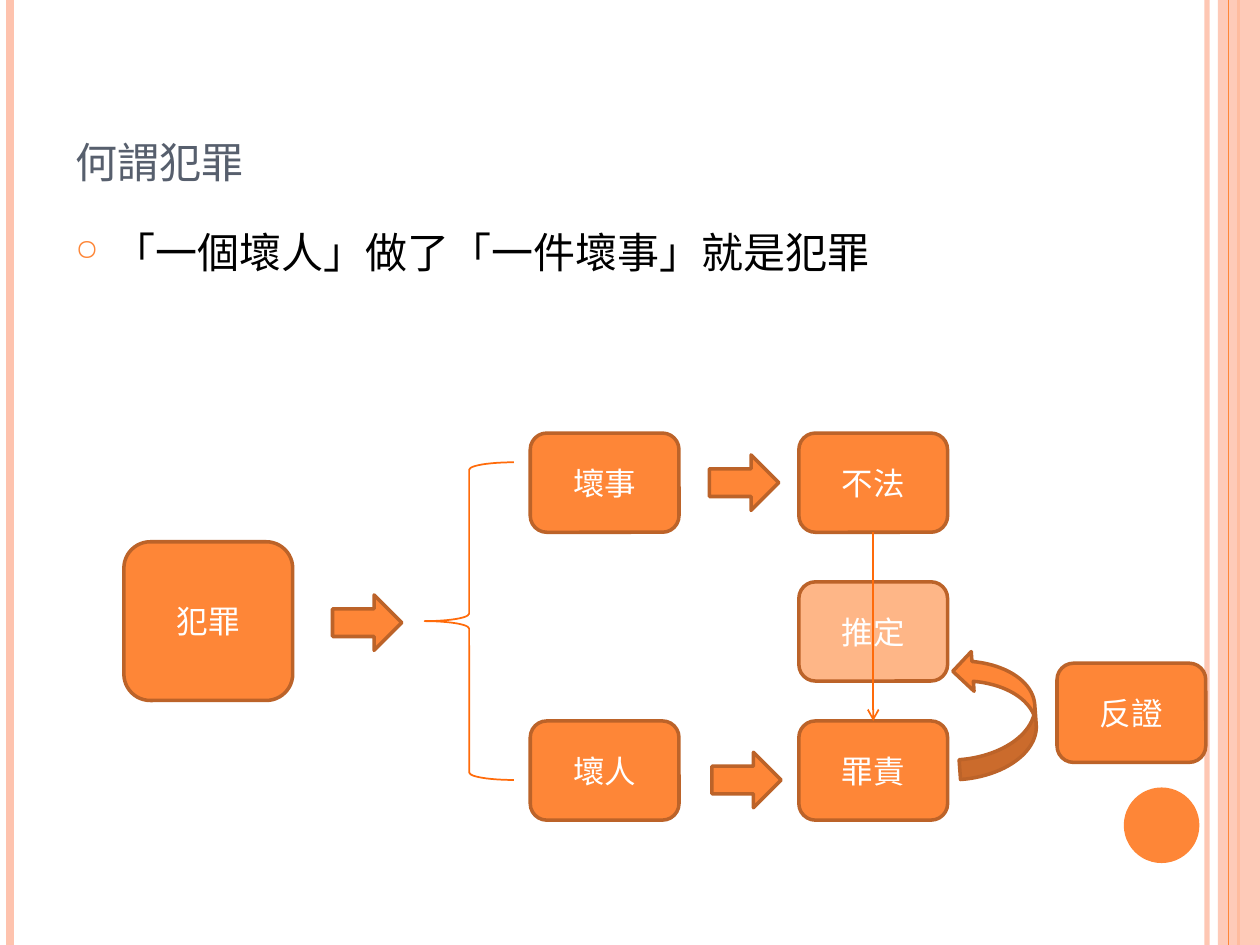
"""Build the slide that explains what a crime is."""
from dataclasses import dataclass

from lxml.etree import SubElement
from pptx import Presentation
from pptx.dml.color import RGBColor
from pptx.enum.shapes import MSO_CONNECTOR, MSO_SHAPE
from pptx.enum.text import MSO_ANCHOR, PP_ALIGN
from pptx.oxml.ns import qn
from pptx.util import Pt


@dataclass(frozen=True)
class Theme:
    """Colours, type sizes and font of the slide."""
    accent: str = "FE8637"
    accent_pale: str = "FEB687"
    accent_dark: str = "BC6329"
    stroke: str = "FF6B0A"
    band: str = "FEC3AE"
    title: str = "575F6D"
    body: str = "000000"
    label: str = "FFFFFF"
    font: str = "Cambria"
    title_size: int = 30
    body_size: int = 24
    label_size: int = 18


THEME = Theme()
SLIDE_WIDTH, SLIDE_HEIGHT = 720, 540
BOX_WIDTH, BOX_HEIGHT = 85, 56.7
ARROW_WIDTH, ARROW_HEIGHT = 39.6, 31.7


def set_alpha(element, percent):
    """Give the solid colour inside an element an opacity."""
    color = next(element.iter(qn("a:srgbClr")))
    SubElement(color, qn("a:alpha"), val=str(percent * 1000))


def write_text(frame, text, *, size, color, align=PP_ALIGN.LEFT,
               anchor=MSO_ANCHOR.TOP, small_caps=False):
    """Write one formatted paragraph and return it."""
    frame.word_wrap = True
    frame.vertical_anchor = anchor
    para = frame.paragraphs[0]
    para.alignment = align
    span = para.add_run()
    span.text = text
    span.font.name = THEME.font
    span.font.size = Pt(size)
    span.font.color.rgb = RGBColor.from_string(color)
    if small_caps:
        span.font._element.set("cap", "small")
    return para


def add_text_box(page, text, left, top, width, height, **style):
    """Add a text box and return its paragraph."""
    box = page.shapes.add_textbox(Pt(left), Pt(top), Pt(width), Pt(height))
    return write_text(box.text_frame, text, **style)


def add_bullet(para, char, color, percent, indent):
    """Give a paragraph a hanging bullet."""
    properties = para._p.get_or_add_pPr()
    properties.set("marL", str(Pt(indent)))
    properties.set("indent", str(-Pt(indent)))
    bullet_color = SubElement(properties, qn("a:buClr"))
    SubElement(bullet_color, qn("a:srgbClr"), val=color)
    SubElement(properties, qn("a:buSzPct"), val=str(percent * 1000))
    SubElement(properties, qn("a:buChar"), char=char)


def add_figure(page, kind, left, top, width, height, *, fill=THEME.accent,
               line=THEME.accent_dark, weight=2):
    """Add a preset shape; None leaves out its fill or line."""
    figure = page.shapes.add_shape(kind, Pt(left), Pt(top), Pt(width), Pt(height))
    figure.shadow.inherit = False
    if fill:
        figure.fill.solid()
        figure.fill.fore_color.rgb = RGBColor.from_string(fill)
    else:
        figure.fill.background()
    if line:
        figure.line.color.rgb = RGBColor.from_string(line)
        figure.line.width = Pt(weight)
    else:
        figure.line.fill.background()
    return figure


def add_box(page, text, left, top, width=BOX_WIDTH, height=BOX_HEIGHT,
            fill=THEME.accent):
    """Add a rounded box with a centred label."""
    box = add_figure(page, MSO_SHAPE.ROUNDED_RECTANGLE, left, top, width, height,
                     fill=fill)
    write_text(box.text_frame, text, size=THEME.label_size, color=THEME.label,
               align=PP_ALIGN.CENTER, anchor=MSO_ANCHOR.MIDDLE)
    return box


def add_line(page, start, end, color, weight):
    """Add a straight line without a shadow."""
    line = page.shapes.add_connector(MSO_CONNECTOR.STRAIGHT, *map(Pt, start + end))
    line.line.color.rgb = RGBColor.from_string(color)
    line.line.width = Pt(weight)
    SubElement(line._element.spPr, qn("a:effectLst"))
    return line


def join_down(page, upper, lower):
    """Join two boxes by an arrow from bottom to top."""
    line = add_line(page, (0, 0), (0, 0), THEME.stroke, 1)
    line.begin_connect(upper, 2)
    line.end_connect(lower, 0)
    SubElement(line.line._get_or_add_ln(), qn("a:tailEnd"), type="arrow")


def add_rule(page, x, color, weight):
    """Add a line over the full slide height."""
    return add_line(page, (x, 0), (x, SLIDE_HEIGHT), color, weight)


def add_decoration(page):
    """Draw the side bands and the corner disc."""
    set_alpha(add_rule(page, 689.8, THEME.band, 3)._element, 93)
    add_rule(page, 5.8, THEME.band, 4.5)
    add_rule(page, 707.8, THEME.accent, 1.5)
    band = add_figure(page, MSO_SHAPE.RECTANGLE, 696, 0, 24, SLIDE_HEIGHT,
                      fill=THEME.band, line=None)
    set_alpha(band._element, 87)
    add_rule(page, 702, THEME.accent, 0.75)
    add_figure(page, MSO_SHAPE.OVAL, 642.2, 450, 43.2, 43.2, line=None)


def add_diagram(page):
    """Draw the boxes, arrows and brace."""
    act_column, law_column = 303, 456.5
    upper_row, middle_row, lower_row = 247.5, 332.5, 412
    add_box(page, "犯罪", 70.8, 309.6, 96.5, 90.7)
    add_figure(page, MSO_SHAPE.LEFT_BRACE, 242.6, 264.2, 51, 181.5,
               fill=None, line=THEME.stroke, weight=1)
    for left, top in ((190, 340), (405.4, 260), (406.8, 429.9)):
        add_figure(page, MSO_SHAPE.RIGHT_ARROW, left, top, ARROW_WIDTH, ARROW_HEIGHT)
    add_box(page, "壞事", act_column, upper_row)
    add_box(page, "壞人", act_column, lower_row)
    guilt = add_box(page, "罪責", law_column, lower_row)
    unlawful = add_box(page, "不法", law_column, upper_row)
    add_box(page, "推定", law_column, middle_row, fill=THEME.accent_pale)
    join_down(page, unlawful, guilt)
    rebuttal = add_figure(page, MSO_SHAPE.CURVED_UP_ARROW, 532.2, 384.5, 73.4, 45.4)
    rebuttal.rotation = 265.9
    add_box(page, "反證", 604, 379)


def main():
    """Build and save the deck."""
    deck = Presentation()
    deck.slide_width, deck.slide_height = Pt(SLIDE_WIDTH), Pt(SLIDE_HEIGHT)
    page = deck.slides.add_slide(deck.slide_layouts[6])
    add_decoration(page)
    add_text_box(page, "何謂犯罪", 36, 21.6, 588, 90, size=THEME.title_size,
                 color=THEME.title, anchor=MSO_ANCHOR.BOTTOM, small_caps=True)
    para = add_text_box(page, "「一個壞人」做了「一件壞事」就是犯罪", 36, 126, 588, 384,
                        size=THEME.body_size, color=THEME.body)
    para.space_before = Pt(6)
    add_bullet(para, "○", THEME.accent, 70, 21.6)
    add_diagram(page)
    deck.save("out.pptx")


if __name__ == "__main__":
    main()
